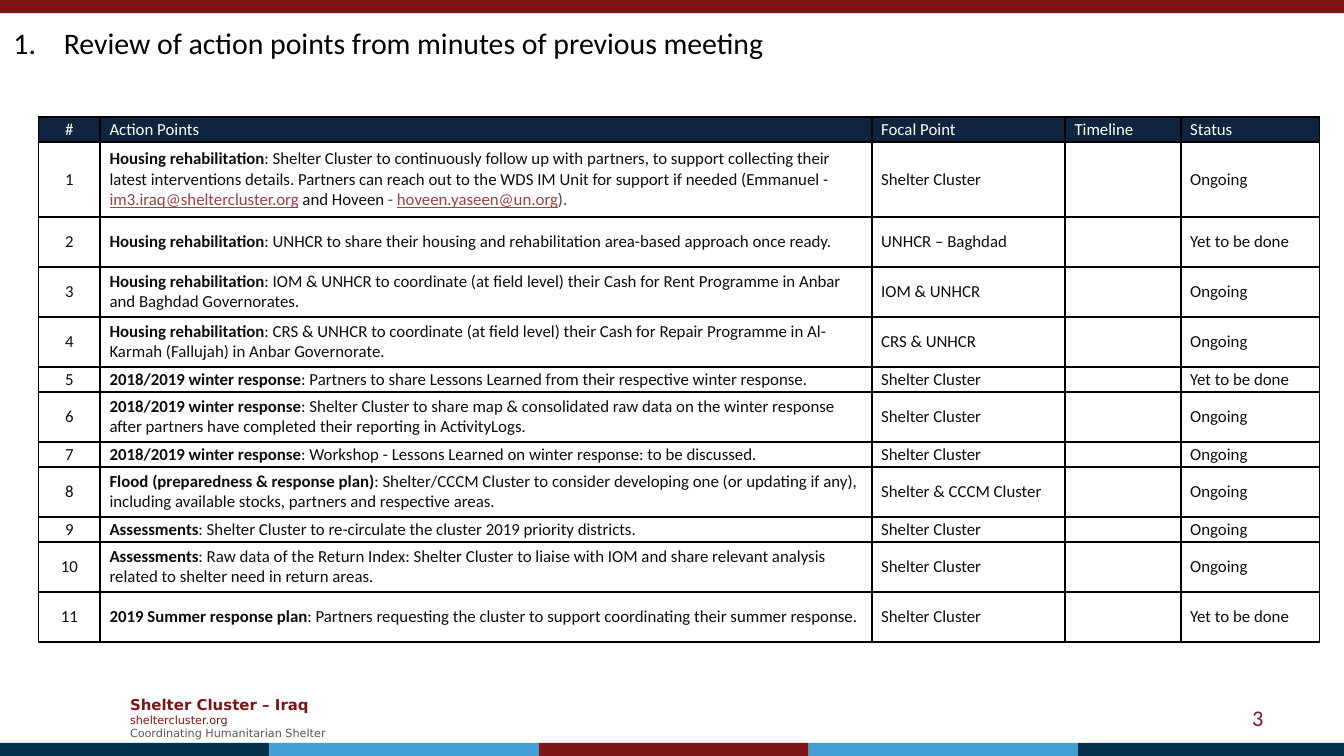
"""Builds the action point review slide of the Shelter Cluster meeting."""
from lxml.etree import SubElement as Sub
from pptx import Presentation
from pptx.dml.color import RGBColor as RGB
from pptx.enum.shapes import MSO_SHAPE as Shape
from pptx.enum.text import MSO_ANCHOR as Anchor, MSO_AUTO_SIZE as Auto, PP_ALIGN as Align
from pptx.oxml.ns import qn
from pptx.util import Pt

RED = RGB(0x7F, 0x14, 0x16)
NAVY = RGB(0x04, 0x31, 0x4C)
SKY = RGB(0x45, 0x9F, 0xD5)
HEAD = RGB(0x0F, 0x24, 0x3E)
INK = RGB(0x0D, 0x0D, 0x0D)
GREY = RGB(0x40, 0x40, 0x40)
SLATE = RGB(0x59, 0x59, 0x59)
LINK = RGB(0x99, 0x43, 0x45)
BLACK = RGB(0, 0, 0)
WHITE = RGB(255, 255, 255)

COLS = (33, 413.4, 103.6, 62, 74.2)
LINE = 13.4
HEADS = ("#", "Action Points", "Focal Point", "Timeline", "Status")
HOUSE = "Housing rehabilitation"
WINTER = "2018/2019 winter response"
CHECK = "Assessments"
TEAM = "Shelter Cluster"
OPEN = "Ongoing"
TODO = "Yet to be done"
MAILS = (
    ("im3.iraq@sheltercluster.org", LINK),
    (" ", GREY),
    ("and Hoveen ", INK),
    ("- ", GREY),
    ("hoveen.yaseen@un.org", LINK),
    (").", GREY),
)
POINTS = (
    (3, HOUSE, "Shelter Cluster to continuously follow up with partners, to support collecting "
     "their latest interventions details. Partners can reach out to the WDS IM Unit for "
     "support if needed (Emmanuel - ", TEAM, OPEN, MAILS),
    (2, HOUSE, "UNHCR to share their housing and rehabilitation area-based approach once ready.",
     "UNHCR – Baghdad", TODO),
    (2, HOUSE, "IOM & UNHCR to coordinate (at field level) their Cash for Rent Programme in "
     "Anbar and Baghdad Governorates.", "IOM & UNHCR", OPEN),
    (2, HOUSE, "CRS & UNHCR to coordinate (at field level) their Cash for Repair Programme in "
     "Al-Karmah (Fallujah) in Anbar Governorate.", "CRS & UNHCR", OPEN),
    (1, WINTER, "Partners to share Lessons Learned from their respective winter response.",
     TEAM, TODO),
    (2, WINTER, "Shelter Cluster to share map & consolidated raw data on the winter response "
     "after partners have completed their reporting in ActivityLogs.", TEAM, OPEN),
    (1, WINTER, "Workshop - Lessons Learned on winter response: to be discussed.", TEAM, OPEN),
    (2, "Flood (preparedness & response plan)", "Shelter/CCCM Cluster to consider developing "
     "one (or updating if any), including available stocks, partners and respective areas.",
     "Shelter & CCCM Cluster", OPEN),
    (1, CHECK, "Shelter Cluster to re-circulate the cluster 2019 priority districts.", TEAM, OPEN),
    (2, CHECK, "Raw data of the Return Index: Shelter Cluster to liaise with IOM and share "
     "relevant analysis related to shelter need in return areas.", TEAM, OPEN),
    (2, "2019 Summer response plan", "Partners requesting the cluster to support coordinating "
     "their summer response.", TEAM, TODO),
)


class Deck:
    """Holds the style and the current slide."""

    def __init__(self, font="Calibri", foot="DejaVu Sans"):
        self.font, self.foot = font, foot
        self.show = Presentation()
        self.show.slide_width, self.show.slide_height = Pt(720), Pt(405)
        self.slide = self.show.slides.add_slide(self.show.slide_layouts[5])

    def style(self, para, size, color, face=None, bold=False, align=Align.LEFT):
        para.alignment = align
        font = para.font
        font.name, font.size, font.bold = face or self.font, Pt(size), bold
        font.color.rgb = color

    def title(self, text):
        box = self.slide.shapes.title
        box.left, box.top, box.width, box.height = Pt(0), Pt(9.4), Pt(720), Pt(26.6)
        frame = box.text_frame
        frame.text = text
        frame.vertical_anchor, frame.auto_size = Anchor.MIDDLE, Auto.NONE
        para = frame.paragraphs[0]
        props = para._p.get_or_add_pPr()
        props.set("marL", str(Pt(27)))
        props.set("indent", str(Pt(-27)))
        Sub(props, qn("a:buFont"), typeface="+mj-lt")
        Sub(props, qn("a:buAutoNum"), type="arabicPeriod")
        self.style(para, 16, BLACK)

    def bar(self, left, top, width, color):
        box = self.slide.shapes.add_shape(Shape.RECTANGLE, Pt(left), Pt(top), Pt(width), Pt(7))
        box.shadow.inherit = False
        box.fill.solid()
        box.fill.fore_color.rgb = color
        box.line.fill.background()

    def text(self, left, top, width, height, lines, face=None, align=Align.LEFT):
        box = self.slide.shapes.add_textbox(Pt(left), Pt(top), Pt(width), Pt(height))
        frame = box.text_frame
        frame.word_wrap, frame.vertical_anchor = True, Anchor.MIDDLE
        frame.text = "\n".join(line[0] for line in lines)
        for para, (_, size, color, bold) in zip(frame.paragraphs, lines):
            self.style(para, size, color, face, bold, align)

    def cell(self, cell, runs, color=INK, fill=None, align=Align.LEFT):
        cell.margin_left = cell.margin_right = Pt(5)
        cell.margin_top = cell.margin_bottom = Pt(0)
        cell.vertical_anchor = Anchor.MIDDLE
        props = cell._tc.get_or_add_tcPr()
        for side in "LRTB":
            edge = Sub(props, qn(f"a:ln{side}"), w=str(Pt(1)))
            Sub(Sub(edge, qn("a:solidFill")), qn("a:srgbClr"), val=str(BLACK))
        if fill:
            cell.fill.solid()
            cell.fill.fore_color.rgb = fill
        else:
            cell.fill.background()
        para = cell.text_frame.paragraphs[0]
        self.style(para, 9, color, align=align)
        for text, tint, bold in runs:
            run = para.add_run()
            run.text = text
            if bold:
                run.font.bold = True
            if tint != color:
                run.font.color.rgb = tint
            if tint == LINK:
                run.font.underline = True
        if not runs:
            Sub(para._p, qn("a:endParaRPr"), sz="900")

    def table(self, left, top):
        sizes = [LINE] + [LINE * point[0] for point in POINTS]
        grid = self.slide.shapes.add_table(
            len(sizes), len(COLS), Pt(left), Pt(top), Pt(sum(COLS)), Pt(sum(sizes))).table
        for col, width in zip(grid.columns, COLS):
            col.width = Pt(width)
        for row, height in zip(grid.rows, sizes):
            row.height = Pt(height)
        for col, head in enumerate(HEADS):
            align = Align.LEFT if col else Align.CENTER
            self.cell(grid.cell(0, col), [(head, WHITE, False)], WHITE, HEAD, align)
        for row, (_, topic, task, focal, state, *more) in enumerate(POINTS, 1):
            tail = [(text, tint, False) for part in more for text, tint in part]
            cells = (
                [(str(row), INK, False)],
                [(topic, INK, True), (f": {task}", INK, False), *tail],
                [(focal, INK, False)],
                [],
                [(state, INK, False)],
            )
            for col, runs in enumerate(cells):
                align = Align.LEFT if col else Align.CENTER
                self.cell(grid.cell(row, col), runs, align=align)


def main():
    deck = Deck()
    deck.text(62.6, 368.6, 124.6, 31.7, (
        ("Shelter Cluster – Iraq", 8, RED, True),
        ("sheltercluster.org", 6, RED, False),
        ("Coordinating Humanitarian Shelter", 6, SLATE, False),
    ), deck.foot)
    deck.bar(0, 0, 720, RED)
    for step, color in enumerate((NAVY, SKY, RED, SKY, NAVY)):
        deck.bar(step * 144.4, 398, 144.4, color)
    deck.text(516.2, 373.7, 167.8, 21.6, [("3", 12, RED, False)], align=Align.RIGHT)
    deck.title("Review of action points from minutes of previous meeting")
    deck.table(20.7, 62.7)
    deck.show.save("out.pptx")


if __name__ == "__main__":
    main()
